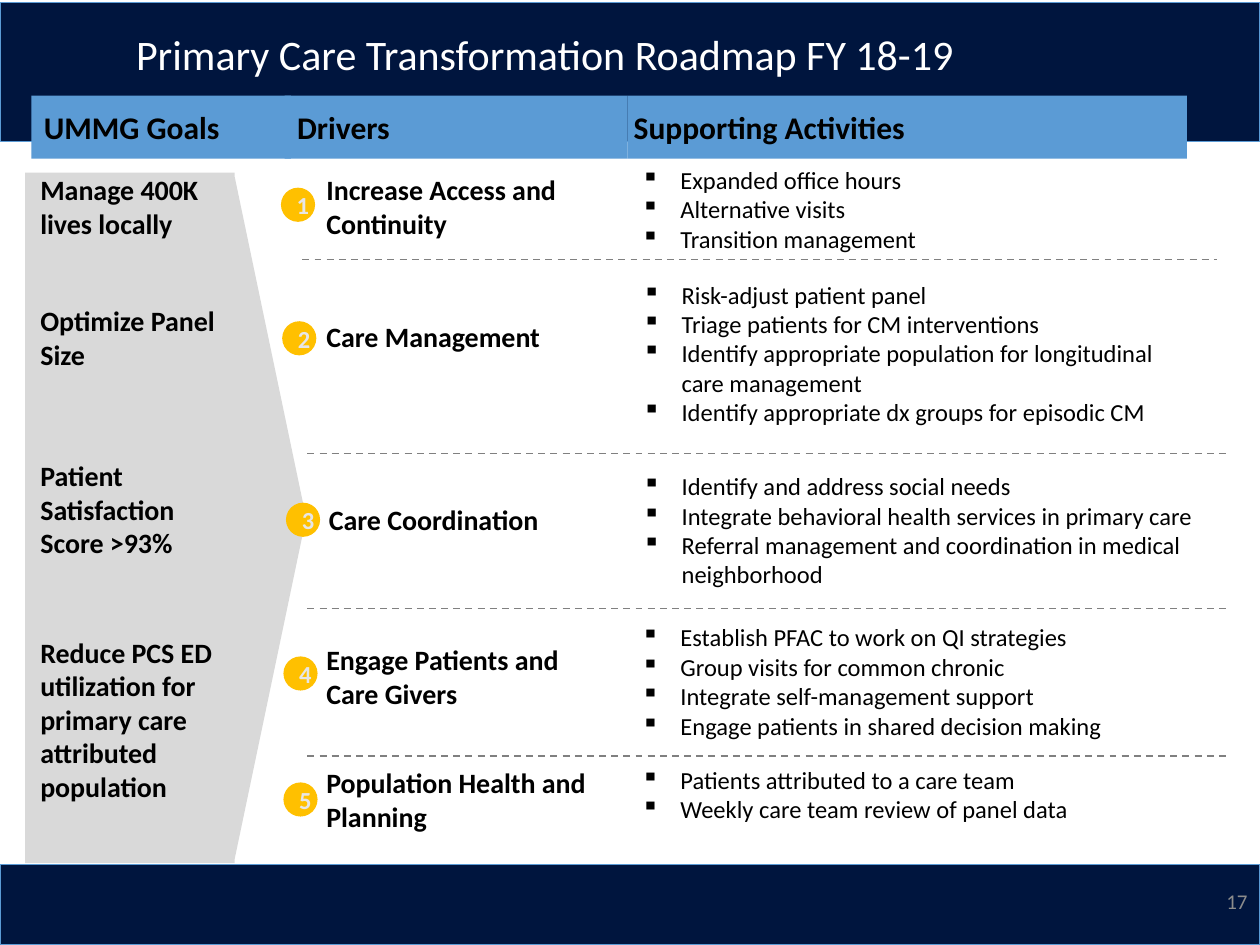
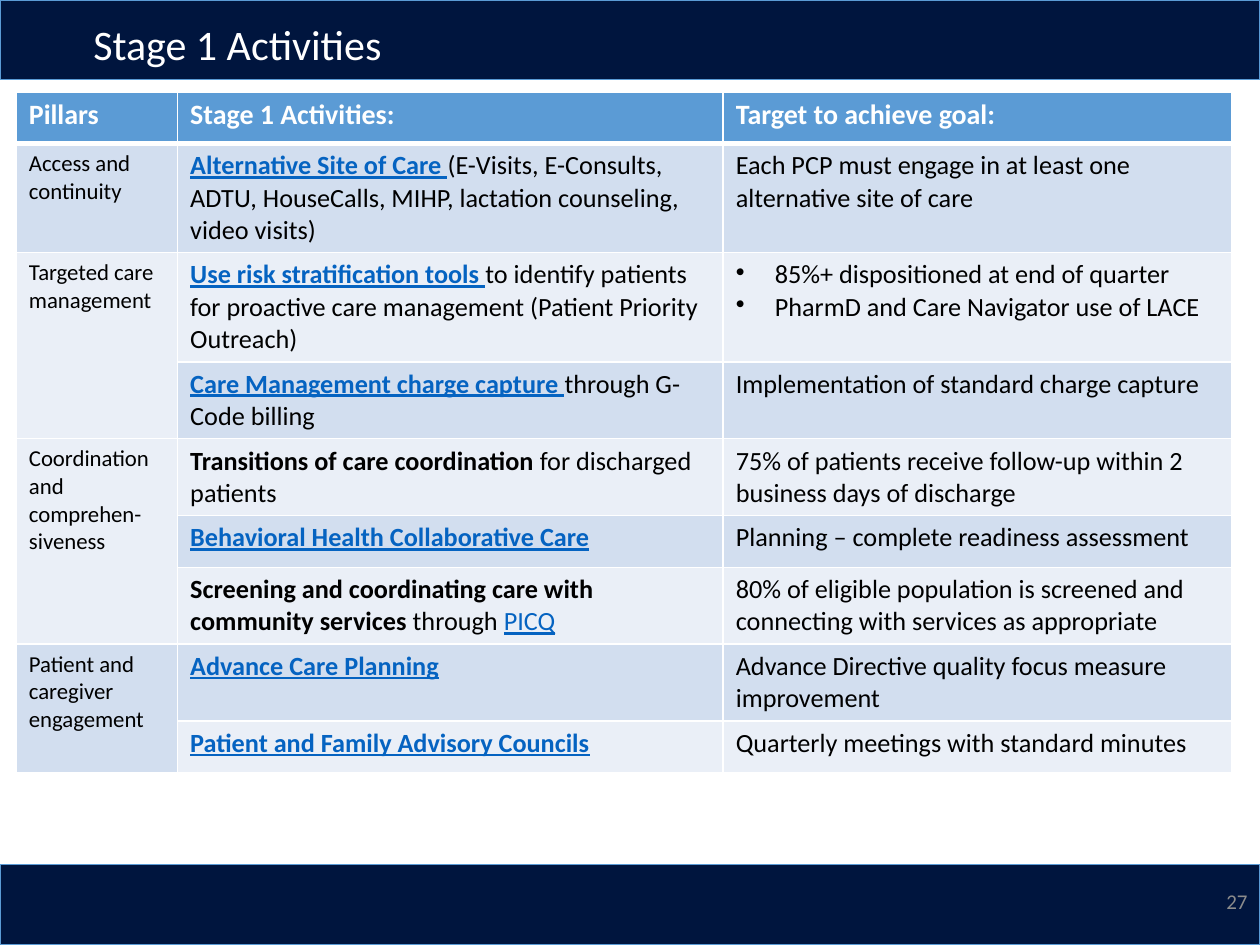
from dataclasses import dataclass
from itertools import count

from lxml.etree import SubElement
from pptx import Presentation
from pptx.dml.color import RGBColor
from pptx.enum.dml import MSO_LINE
from pptx.enum.shapes import MSO_CONNECTOR, MSO_SHAPE
from pptx.enum.text import MSO_ANCHOR as Anchor, MSO_AUTO_SIZE as AutoSize, PP_ALIGN as Align
from pptx.oxml.ns import qn
from pptx.util import Inches, Pt


@dataclass(frozen=True)
class Theme:
    """Colours and type sizes used on every page."""
    font: str = "Calibri"
    navy: str = "00153E"
    blue: str = "5B9BD5"
    link: str = "0563C1"
    amber: str = "FFC000"
    pale: str = "E7E6E6"
    grey: str = "D9D9D9"
    dash: str = "808080"
    number: str = "8C8C8C"
    black: str = "000000"
    white: str = "FFFFFF"
    bands: tuple = ("D2DEEF", "EAEFF7")
    title_size: float = 24
    heading_size: float = 18
    label_size: float = 16
    cell_size: float = 15
    list_size: float = 14
    pillar_size: float = 13
    number_size: float = 12


THEME = Theme()
TITLE = {"size": THEME.title_size, "color": THEME.white}
NUMBER = {"size": THEME.number_size, "color": THEME.number}
HEADING = {"size": THEME.heading_size, "bold": True}
LABEL = {"size": THEME.label_size, "bold": True}
LIST = {"size": THEME.list_size}
BADGE = {"size": THEME.list_size, "bold": True, "color": THEME.pale}
TABLE_HEAD = {"size": THEME.label_size, "bold": True, "color": THEME.white}
PILLAR = {"size": THEME.pillar_size}
PLAIN = {"size": THEME.cell_size}
BOLD = {**PLAIN, "bold": True}
LIGHT_LINK = {**PLAIN, "color": THEME.link, "underline": True}
LINK = {**LIGHT_LINK, "bold": True}

GOALS = [
    ("Manage 400K lives locally", 1.37, 1.51, 0.54),
    ("Optimize Panel Size", 2.41, 1.51, 0.54),
    ("Patient Satisfaction Score >93%", 3.64, 1.51, 0.81),
    ("Reduce PCS ED utilization for primary care attributed population", 5.04, 1.67, 1.35),
]
COLUMN_HEADS = [
    ("Drivers", 2.26, 2.72, 0.1),
    ("Supporting Activities", 4.98, 4.44, 0.05),
    ("UMMG Goals", 0.25, 2.06, 0.1),
]
DRIVERS = [
    ("Increase Access and Continuity", (2.59, 1.37, 2.02, 0.54), (2.24, 1.5),
     (5.04, 1.26, 4.96, 0.8),
     ["Expanded office hours", "Alternative visits", "Transition management"]),
    ("Care Management", (2.59, 2.54, 2.02, 0.27), (2.25, 2.56),
     (5.05, 2.17, 4.5, 1.28),
     ["Risk-adjust patient panel", "Triage patients for CM interventions",
      "Identify appropriate population for longitudinal care management",
      "Identify appropriate dx groups for episodic CM"]),
    ("Care Coordination", (2.61, 3.99, 2.02, 0.27), (2.28, 4),
     (5.05, 3.69, 4.95, 1.04),
     ["Identify and address social needs",
      "Integrate behavioral health services in primary care",
      "Referral management and coordination in medical neighborhood"]),
    ("Engage Patients and Care Givers", (2.59, 5.1, 2.02, 0.54), (2.26, 5.22),
     (5.04, 4.89, 4.81, 1.04),
     ["Establish PFAC to work on QI strategies", "Group visits for common chronic",
      "Integrate self-management support", "Engage patients in shared decision making"]),
    ("Population Health and Planning", (2.59, 6.08, 2.23, 0.54), (2.26, 6.22),
     (5.04, 6.02, 4.93, 0.57),
     ["Patients attributed to a care team", "Weekly care team review of panel data"]),
]
DIVIDERS = [(2.4, 9.66, 2.06), (2.44, 9.77, 3.6), (2.44, 9.77, 4.83), (2.44, 9.77, 6)]

TABLE_HEADS = ["Pillars", "Stage 1 Activities:", "Target to achieve goal:"]
COLUMN_WIDTHS = [1.28, 4.33, 4.04]
HEAD_HEIGHT = 0.41
ACTIVITIES = [
    ("Access and continuity", 0.86,
     [("Alternative Site of Care ", LINK),
      ("(E-Visits, E-Consults, ADTU, HouseCalls, MIHP, lactation counseling, video visits)", PLAIN)],
     ["Each PCP must engage in at least one alternative site of care"]),
    ("Targeted care management", 0.86,
     [("Use risk stratification tools", LINK), (" ", LIGHT_LINK),
      ("to identify patients for proactive care management (Patient Priority Outreach)", PLAIN)],
     ["85%+ dispositioned at end of quarter", "PharmD and Care Navigator use of LACE"]),
    (None, 0.61,
     [("Care Management charge capture ", LINK), ("through G-Code billing", PLAIN)],
     ["Implementation of standard charge capture"]),
    ("Coordination and comprehen-siveness", 0.61,
     [("Transitions of care coordination ", BOLD), ("for discharged patients", PLAIN)],
     ["75% of patients receive follow-up within 2 business days of discharge"]),
    (None, 0.41,
     [("Behavioral Health Collaborative Care", LINK)],
     ["Planning – complete readiness assessment"]),
    (None, 0.61,
     [("Screening and coordinating care with community services ", BOLD),
      ("through ", PLAIN), ("PICQ", LIGHT_LINK)],
     ["80% of eligible population is screened and connecting with services as appropriate"]),
    ("Patient and caregiver engagement", 0.61,
     [("Advance Care Planning", LINK)],
     ["Advance Directive quality focus measure improvement"]),
    (None, 0.41,
     [("Patient and Family Advisory Councils", LINK)],
     ["Quarterly meetings with standard minutes"]),
]


def rgb(code):
    """Turn a hex code into a colour."""
    return RGBColor.from_string(code)


def apply(target, values):
    """Set every attribute named in a dict of format values."""
    for name, value in values.items():
        setattr(target, name, value)


def place(box, area):
    """Put a shape at left, top, width, height in inches."""
    apply(box, dict(zip(("left", "top", "width", "height"), map(Inches, area))))


def add_spans(para, spans):
    """Add formatted runs to a paragraph."""
    for text, style in spans:
        span = para.add_run()
        span.text = text
        look = {"name": THEME.font, "bold": False, **style, "size": Pt(style["size"])}
        span.font.color.rgb = rgb(look.pop("color", THEME.black))
        apply(span.font, look)


def add_bullet(para, mark):
    """Give a paragraph a hanging bullet."""
    settings = para._p.get_or_add_pPr()
    settings.set("marL", str(Inches(0.31)))
    settings.set("indent", str(-Inches(0.31)))
    SubElement(settings, qn("a:buChar")).set("char", mark)


def write(frame, paragraphs, mark=None, align=Align.LEFT):
    """Fill a text frame with paragraphs, each a list of spans."""
    for index, spans in enumerate(paragraphs):
        para = frame.add_paragraph() if index else frame.paragraphs[0]
        para.alignment = align
        if mark:
            add_bullet(para, mark)
        add_spans(para, spans)


def set_frame(frame, anchor, side=0.1, edge=0.05):
    """Set wrapping, anchoring and insets of a text frame."""
    apply(frame, {
        "word_wrap": True, "auto_size": AutoSize.NONE, "vertical_anchor": anchor,
        "margin_left": Inches(side), "margin_right": Inches(side),
        "margin_top": Inches(edge), "margin_bottom": Inches(edge),
    })


def add_block(page, kind, area, fill, line=None, width=0.5):
    """Add a flat preset shape."""
    block = page.shapes.add_shape(kind, *map(Inches, area))
    block.shadow.inherit = False
    block.fill.solid()
    block.fill.fore_color.rgb = rgb(fill)
    if line:
        block.line.color.rgb = rgb(line)
        block.line.width = Pt(width)
    else:
        block.line.fill.background()
    return block


def add_label(page, area, paragraphs, inset=0, mark=None):
    """Add a top-anchored text box with even insets."""
    box = page.shapes.add_textbox(*map(Inches, area))
    set_frame(box.text_frame, Anchor.TOP, inset, inset)
    write(box.text_frame, paragraphs, mark)


def add_heading(page, text, left, width, side):
    """Add a blue column heading."""
    block = add_block(page, MSO_SHAPE.RECTANGLE, (left, 0.76, width, 0.5), THEME.blue)
    set_frame(block.text_frame, Anchor.BOTTOM, side, 0.1)
    write(block.text_frame, [[(text, HEADING)]])


def add_badge(page, number, corner):
    """Add a numbered amber circle."""
    block = add_block(page, MSO_SHAPE.OVAL, (*corner, 0.25, 0.25), THEME.amber, THEME.amber, 1.5)
    set_frame(block.text_frame, Anchor.MIDDLE)
    write(block.text_frame, [[(str(number), BADGE)]], align=Align.CENTER)


def add_divider(page, start, end, top):
    """Add a dashed horizontal rule."""
    rule = page.shapes.add_connector(
        MSO_CONNECTOR.STRAIGHT, *map(Inches, (start, top, end, top)))
    rule.line.color.rgb = rgb(THEME.dash)
    apply(rule.line, {"width": Pt(1), "dash_style": MSO_LINE.DASH})
    SubElement(rule.element.spPr, qn("a:effectLst"))


def add_page(deck, title, title_area, band, number):
    """Add a page with its bands, title and page number."""
    page = deck.slides.add_slide(deck.slide_layouts[5])
    for top, height in (band, (6.86, 0.64)):
        add_block(page, MSO_SHAPE.RECTANGLE, (0, top, 10, height), THEME.navy, THEME.blue)
    box = page.shapes.title
    box.element.getparent().append(box.element)
    place(box, title_area)
    set_frame(box.text_frame, Anchor.MIDDLE)
    write(box.text_frame, [[(title, TITLE)]])
    box.text_frame.paragraphs[0].line_spacing = 0.9
    footer = page.shapes.add_textbox(*map(Inches, (7.75, 6.95, 2.25, 0.4)))
    set_frame(footer.text_frame, Anchor.MIDDLE)
    write(footer.text_frame, [[(str(number), NUMBER)]], align=Align.RIGHT)
    return page


def style_cell(cell, fill, bottom=1, top=1):
    """Give a cell white borders and a solid fill."""
    settings = cell._tc.get_or_add_tcPr()
    for side, width in (("L", 1), ("R", 1), ("T", top), ("B", bottom)):
        border = SubElement(settings, qn(f"a:ln{side}"), w=str(Pt(width)))
        SubElement(SubElement(border, qn("a:solidFill")), qn("a:srgbClr"), val=THEME.white)
    cell.fill.solid()
    cell.fill.fore_color.rgb = rgb(fill)


def add_activity_table(page):
    """Add the table of pillars, activities and targets."""
    area = (0.13, 0.73, sum(COLUMN_WIDTHS), HEAD_HEIGHT + sum(row[1] for row in ACTIVITIES))
    table = page.shapes.add_table(len(ACTIVITIES) + 1, 3, *map(Inches, area)).table
    for column, width in zip(table.columns, COLUMN_WIDTHS):
        column.width = Inches(width)
    table.rows[0].height = Inches(HEAD_HEIGHT)
    for index, text in enumerate(TABLE_HEADS):
        style_cell(table.cell(0, index), THEME.blue, bottom=3)
        write(table.cell(0, index).text_frame, [[(text, TABLE_HEAD)]])
    for row, (pillar, height, activity, targets) in enumerate(ACTIVITIES, 1):
        table.rows[row].height = Inches(height)
        cells = [table.cell(row, column) for column in range(3)]
        for cell in cells:
            style_cell(cell, THEME.bands[(row - 1) % 2], top=3 if row == 1 else 1)
        if pillar:
            write(cells[0].text_frame, [[(pillar, PILLAR)]])
        write(cells[1].text_frame, [activity])
        write(cells[2].text_frame, [[(text, PLAIN)] for text in targets],
              "•" if len(targets) > 1 else None)
    starts = [row for row, entry in enumerate(ACTIVITIES, 1) if entry[0]]
    for first, following in zip(starts, starts[1:] + [len(ACTIVITIES) + 1]):
        if following - first > 1:
            table.cell(first, 0).merge(table.cell(following - 1, 0))


def add_roadmap(page):
    """Add goals, drivers and supporting activities."""
    arrow = add_block(page, MSO_SHAPE.RIGHT_ARROW_CALLOUT, (0.2, 1.37, 2.23, 5.48), THEME.grey)
    for index, value in enumerate((0.25, 1.213, 0.254, 0.746)):
        arrow.adjustments[index] = value
    for heading in COLUMN_HEADS:
        add_heading(page, *heading)
    for text, top, width, height in GOALS:
        add_label(page, (0.32, top, width, height), [[(text, LABEL)]])
    for divider in DIVIDERS:
        add_divider(page, *divider)
    for number, (name, name_area, corner, list_area, items) in zip(count(1), DRIVERS):
        add_label(page, name_area, [[(name, LABEL)]])
        add_badge(page, number, corner)
        add_label(page, list_area, [[(item, LIST)] for item in items], 0.05, "▪")


def main():
    """Build and save the deck."""
    deck = Presentation()
    apply(deck, {"slide_width": Inches(10), "slide_height": Inches(7.5)})
    add_roadmap(add_page(deck, "Primary Care Transformation Roadmap FY 18-19",
                         (0.98, 0.07, 8.45, 0.77), (0.02, 1.1), 17))
    add_activity_table(add_page(deck, "Stage 1 Activities",
                                (0.64, -0.17, 8.62, 1.09), (0, 0.63), 27))
    deck.save("out.pptx")


if __name__ == "__main__":
    main()
